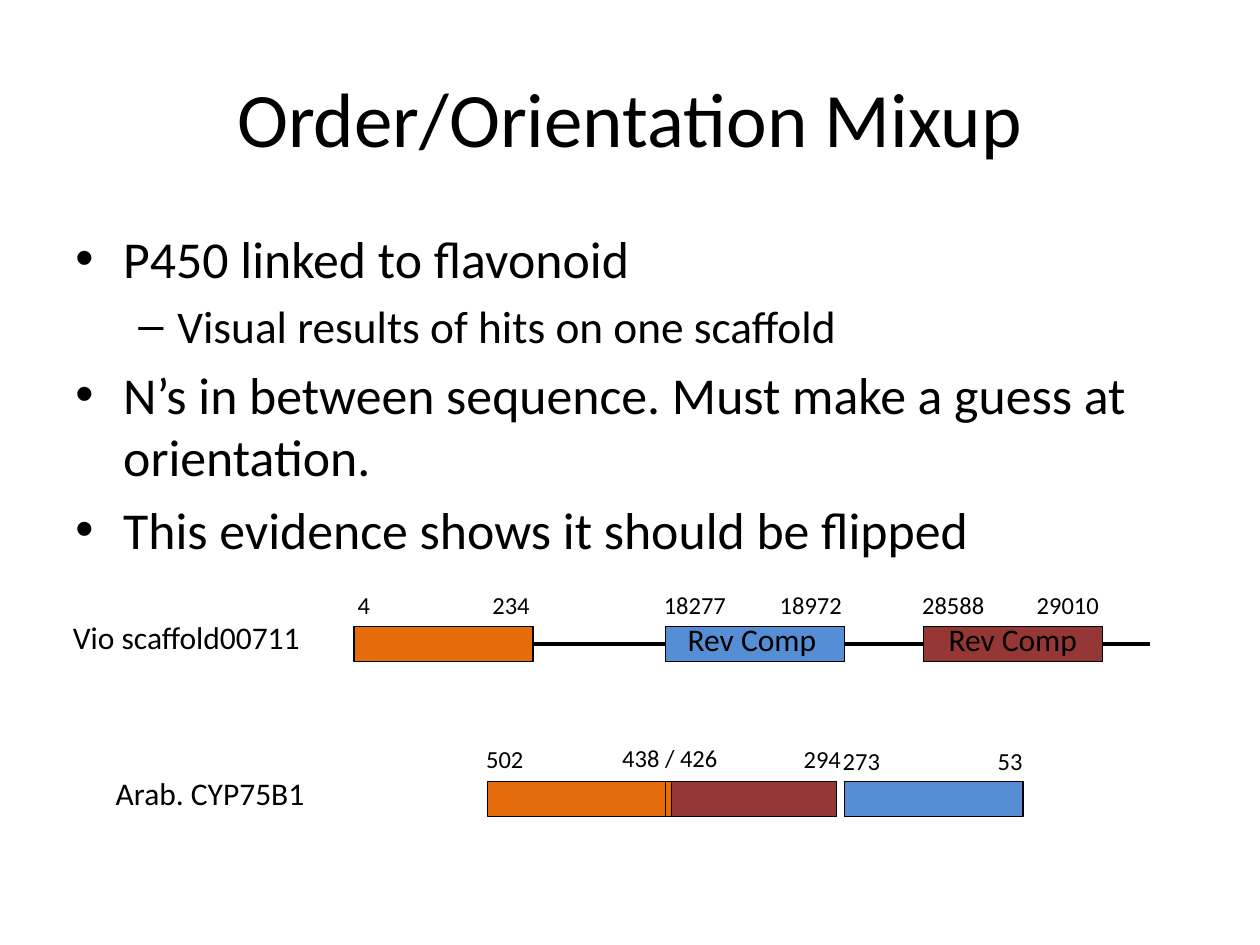
from pptx import Presentation
from pptx.dml.color import RGBColor
from pptx.enum.shapes import MSO_CONNECTOR as Connector, MSO_SHAPE as Shape
from pptx.enum.text import MSO_ANCHOR as Anchor, PP_ALIGN as Align
from pptx.oxml.ns import qn
from pptx.util import Inches, Pt
from lxml.etree import SubElement

BLACK = RGBColor(0x00, 0x00, 0x00)
ORANGE = RGBColor(0xE4, 0x6C, 0x0A)
BLUE = RGBColor(0x55, 0x8E, 0xD5)
RED = RGBColor(0x95, 0x37, 0x35)

presentation = Presentation()
presentation.slide_width = Inches(10)
presentation.slide_height = Inches(7.5)
slide = presentation.slides.add_slide(presentation.slide_layouts[6])


def add_run(paragraph, text, size):
    run = paragraph.add_run()
    run.text = text
    run.font.name = "Calibri"
    run.font.size = Pt(size)
    run.font.color.rgb = BLACK


def add_text(text, left, top, width, height, size):
    box = slide.shapes.add_textbox(Inches(left), Inches(top), Inches(width), Inches(height))
    box.text_frame.word_wrap = False
    add_run(box.text_frame.paragraphs[0], text, size)
    return box.text_frame


# Title
title = add_text("Order/Orientation Mixup", 0.5, 0.3, 9, 1.25, 44)
title.word_wrap = True
title.vertical_anchor = Anchor.MIDDLE
title.paragraphs[0].alignment = Align.CENTER

# Bulleted list: level, text
bullets = [
    (0, "P450 linked to flavonoid"),
    (1, "Visual results of hits on one scaffold"),
    (0, "N’s in between sequence. Must make a guess at orientation."),
    (0, "This evidence shows it should be flipped"),
]
# Per level: size, left margin, hanging indent, bullet
levels = [(29.6, 0.38, -0.38, "•"), (25.9, 0.81, -0.31, "–")]

body = slide.shapes.add_textbox(Inches(0.5), Inches(1.75), Inches(9), Inches(2.58)).text_frame
body.word_wrap = True
for index, (level, text) in enumerate(bullets):
    size, margin, indent, bullet = levels[level]
    paragraph = body.paragraphs[0] if index == 0 else body.add_paragraph()
    paragraph.level = level
    paragraph.space_before = Pt(size * 0.2)
    add_run(paragraph, text, size)
    properties = paragraph._p.get_or_add_pPr()
    properties.set("marL", str(Inches(margin)))
    properties.set("indent", str(Inches(indent)))
    SubElement(properties, qn("a:buFont")).set("typeface", "Arial")
    SubElement(properties, qn("a:buChar")).set("char", bullet)

# Scaffold line between and after the hits
for start, end in [(3.87, 5.7), (5.7, 7.52), (8.14, 9.13)]:
    connector = slide.shapes.add_connector(
        Connector.STRAIGHT, Inches(start), Inches(5.11), Inches(end), Inches(5.11))
    connector.line.color.rgb = BLACK
    connector.line.width = Pt(2)
    SubElement(connector._element.spPr, qn("a:effectLst"))

# Hits: left, top, width, colour
hits = [
    (2.81, 4.97, 1.42, ORANGE),
    (5.28, 4.97, 1.42, BLUE),
    (7.33, 4.97, 1.42, RED),
    (6.7, 6.2, 1.42, BLUE),
    (5.29, 6.2, 1.35, RED),
    (3.87, 6.2, 1.42, ORANGE),
    (5.28, 6.2, 0.05, ORANGE),
]
for left, top, width, colour in hits:
    shape = slide.shapes.add_shape(
        Shape.RECTANGLE, Inches(left), Inches(top), Inches(width), Inches(0.28))
    shape.shadow.inherit = False
    shape.fill.solid()
    shape.fill.fore_color.rgb = colour
    shape.line.color.rgb = BLACK
    shape.line.width = Pt(0.75)

# Sequence names and orientation marks
for text, left, top, width in [
    ("Vio scaffold00711", 0.48, 4.86, 2.23),
    ("Arab. CYP75B1", 0.82, 6.09, 1.72),
    ("Rev Comp", 5.36, 4.87, 1.24),
    ("Rev Comp", 7.43, 4.87, 1.24),
]:
    add_text(text, left, top, width, 0.4, 18)

# Positions at the ends of the hits
for text, left, top, width in [
    ("4", 2.74, 4.63, 0.3),
    ("234", 3.81, 4.63, 0.5),
    ("18277", 5.17, 4.63, 0.7),
    ("18972", 6.09, 4.63, 0.7),
    ("28588", 7.22, 4.63, 0.7),
    ("29010", 8.13, 4.63, 0.7),
    ("502", 3.76, 5.86, 0.5),
    ("438 / 426", 4.84, 5.85, 0.96),
    ("294", 6.28, 5.86, 0.5),
    ("273", 6.59, 5.87, 0.5),
    ("53", 7.82, 5.87, 0.4),
]:
    add_text(text, left, top, width, 0.34, 14)

presentation.save("out.pptx")
